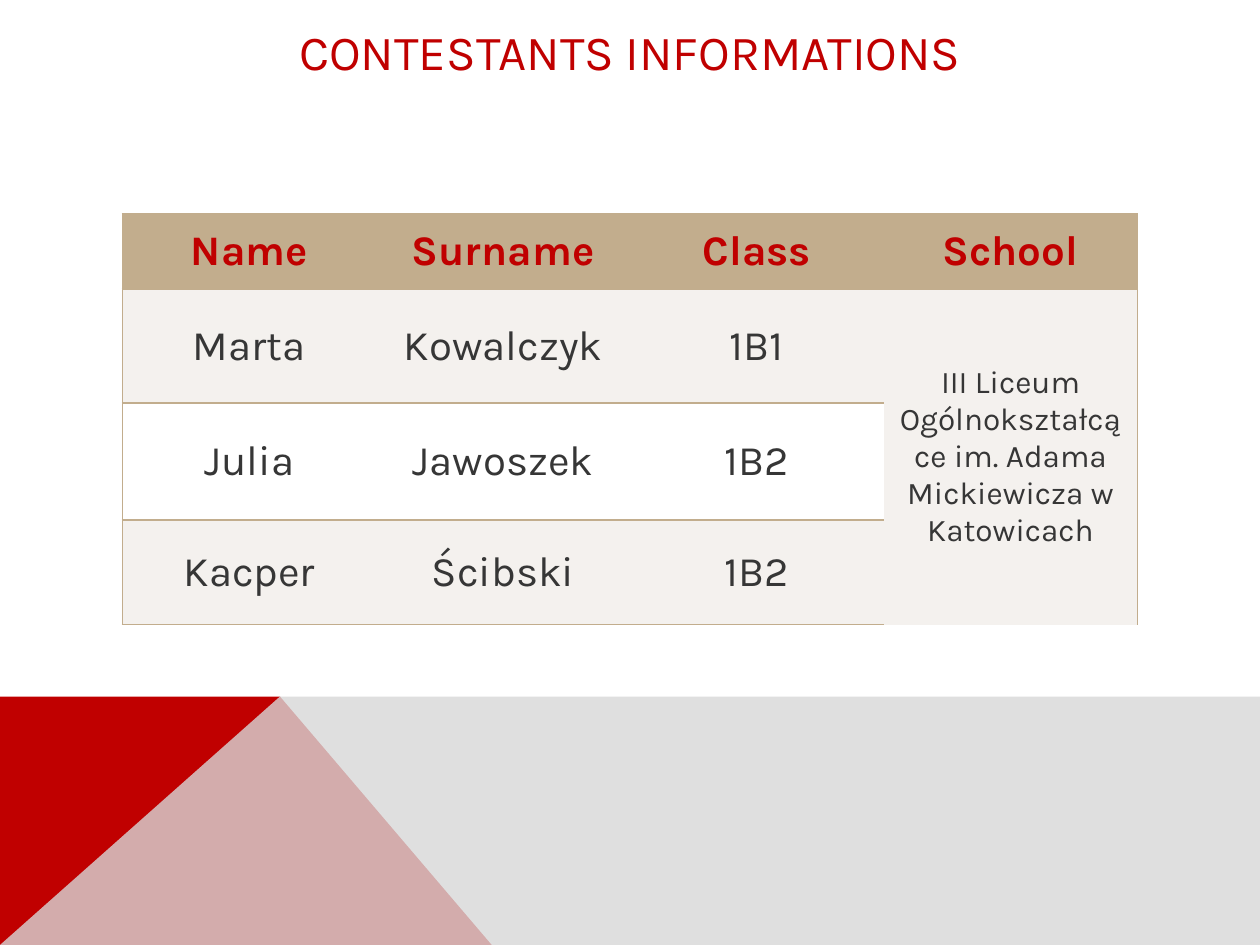
from lxml import etree
from pptx import Presentation
from pptx.dml.color import RGBColor
from pptx.enum.text import MSO_ANCHOR, MSO_AUTO_SIZE, PP_ALIGN
from pptx.oxml.ns import qn
from pptx.util import Pt

CENTER = PP_ALIGN.CENTER
MIDDLE = MSO_ANCHOR.MIDDLE
NO_AUTOFIT = MSO_AUTO_SIZE.NONE
TITLE_ONLY = 5

PAGE_WIDTH, PAGE_HEIGHT = 720, 540
FONT = "Karla"
COLORS = {
    "red": "C00000",
    "gray": "D8D8D8",
    "tan": "C2AD8D",
    "cream": "F4F1EE",
    "white": "FFFFFF",
    "text": "363636",
}

BAND_TOP = 397.5
PEAK_X = 160.5
TABLE_LEFT, TABLE_TOP = 70, 122.4
COLUMN_WIDTH = 145
ROW_HEIGHTS = [42.8, 65.2, 66.8, 59.8]
HEADERS = ["Name", "Surname", "Class", "School"]
CONTESTANTS = [
    ["Marta", "Kowalczyk", "1B1"],
    ["Julia", "Jawoszek", "1B2"],
    ["Kacper", "Ścibski", "1B2"],
]
SCHOOL = "III Liceum Ogólnokształcące im. Adama Mickiewicza w Katowicach"


def rgb(name):
    return RGBColor.from_string(COLORS[name])


def write_text(frame, text, size=24, color="text", bold=False):
    para = frame.paragraphs[0]
    para.alignment = CENTER
    span = para.add_run()
    span.text = text
    span.font.name = FONT
    span.font.size = Pt(size)
    span.font.bold = bold
    span.font.color.rgb = rgb(color)


def add_polygon(page, points, color, opacity=100):
    builder = page.shapes.build_freeform(*points[0], scale=Pt(1))
    builder.add_line_segments(points[1:], close=True)
    shape = builder.convert_to_shape()
    shape.shadow.inherit = False
    shape.fill.solid()
    shape.fill.fore_color.rgb = rgb(color)
    shape.line.fill.background()
    if opacity < 100:
        tint = shape.fill._xPr.find(".//" + qn("a:srgbClr"))
        etree.SubElement(tint, qn("a:alpha"), val=str(opacity * 1000))


def add_title(page, text):
    title = page.shapes.title
    title.left, title.top = Pt(8.6), Pt(0)
    title.width, title.height = Pt(702.8), Pt(58.3)
    frame = title.text_frame
    frame.word_wrap = True
    frame.auto_size = NO_AUTOFIT
    frame.vertical_anchor = MIDDLE
    write_text(frame, text, size=28, color="red")


def set_borders(cell, visible):
    """Draw the sides named in visible (letters of LRTB) and hide the others."""
    properties = cell._tc.get_or_add_tcPr()
    for side in "LRTB":
        line = etree.SubElement(properties, qn("a:ln" + side), w=str(Pt(1)))
        if side in visible:
            fill = etree.SubElement(line, qn("a:solidFill"))
            etree.SubElement(fill, qn("a:srgbClr"), val=COLORS["tan"])
        else:
            etree.SubElement(line, qn("a:noFill"))


def visible_sides(row, column):
    last_row, last_column = len(CONTESTANTS), len(HEADERS) - 1
    if column < last_column:
        return "LTB" if column == 0 else "TB"
    sides = "R"
    if row <= 1:
        sides += "T"
    if row in (0, last_row):
        sides += "B"
    return sides


def format_cell(cell, row, column):
    in_school = column == len(HEADERS) - 1
    if row == 0:
        fill = "tan"
    else:
        fill = "cream" if in_school or row % 2 else "white"
    set_borders(cell, visible_sides(row, column))
    cell.fill.solid()
    cell.fill.fore_color.rgb = rgb(fill)
    cell.vertical_anchor = MIDDLE


def add_contestants_table(page):
    rows, columns = len(ROW_HEIGHTS), len(HEADERS)
    table = page.shapes.add_table(
        rows, columns, Pt(TABLE_LEFT), Pt(TABLE_TOP),
        Pt(COLUMN_WIDTH * columns), Pt(sum(ROW_HEIGHTS))).table
    for column in table.columns:
        column.width = Pt(COLUMN_WIDTH)
    for row, height in zip(table.rows, ROW_HEIGHTS):
        row.height = Pt(height)
    for row in range(rows):
        for column in range(columns):
            format_cell(table.cell(row, column), row, column)

    for column, header in enumerate(HEADERS):
        write_text(table.cell(0, column).text_frame, header, color="red", bold=True)
    for row, contestant in enumerate(CONTESTANTS, start=1):
        for column, value in enumerate(contestant):
            write_text(table.cell(row, column).text_frame, value)
    school = table.cell(1, columns - 1)
    school.merge(table.cell(rows - 1, columns - 1))
    write_text(school.text_frame, SCHOOL, size=18)


def main():
    deck = Presentation()
    deck.slide_width, deck.slide_height = Pt(PAGE_WIDTH), Pt(PAGE_HEIGHT)
    page = deck.slides.add_slide(deck.slide_layouts[TITLE_ONLY])
    page.background.fill.solid()
    page.background.fill.fore_color.rgb = rgb("white")

    peak, corner = (PEAK_X, BAND_TOP), (0, PAGE_HEIGHT)
    add_polygon(page, [corner, (0, BAND_TOP), peak, (281.3, PAGE_HEIGHT)], "red")
    add_polygon(page, [corner, peak, (PAGE_WIDTH, BAND_TOP),
                       (PAGE_WIDTH, PAGE_HEIGHT)], "gray", opacity=80)
    add_title(page, "CONTESTANTS INFORMATIONS")
    add_contestants_table(page)
    deck.save("out.pptx")


if __name__ == "__main__":
    main()
